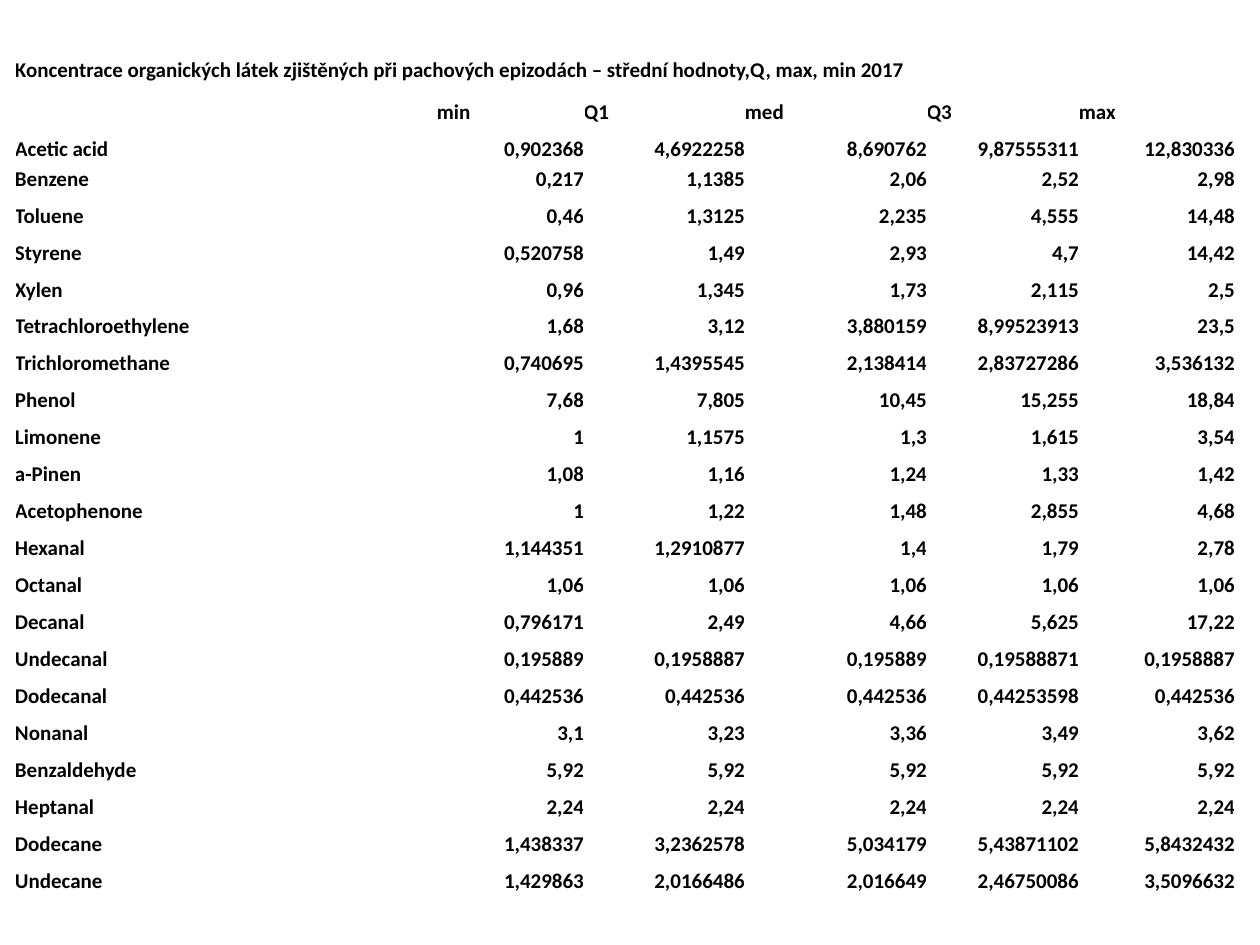
from pptx import Presentation
from pptx.dml.color import RGBColor
from pptx.enum.text import MSO_ANCHOR, PP_ALIGN
from pptx.util import Pt

LEFT, RIGHT = PP_ALIGN.LEFT, PP_ALIGN.RIGHT
BOTTOM = MSO_ANCHOR.BOTTOM
PX = 914400 // 126  # EMU per px
COLORS = {"text": "000000", "label": "FFFFFF"}

TITLE = ("Koncentrace organických látek zjištěných při pachových epizodách"
         " – střední hodnoty,Q, max, min 2017")
HEADERS = ["", "min", "Q1", "med", "Q3", "max"]
SUBSTANCES = [
    ("Acetic acid", "0,902368", "4,6922258", "8,690762", "9,87555311", "12,830336"),
    ("Benzene", "0,217", "1,1385", "2,06", "2,52", "2,98"),
    ("Toluene", "0,46", "1,3125", "2,235", "4,555", "14,48"),
    ("Styrene", "0,520758", "1,49", "2,93", "4,7", "14,42"),
    ("Xylen", "0,96", "1,345", "1,73", "2,115", "2,5"),
    ("Tetrachloroethylene", "1,68", "3,12", "3,880159", "8,99523913", "23,5"),
    ("Trichloromethane", "0,740695", "1,4395545", "2,138414", "2,83727286", "3,536132"),
    ("Phenol", "7,68", "7,805", "10,45", "15,255", "18,84"),
    ("Limonene", "1", "1,1575", "1,3", "1,615", "3,54"),
    ("a-Pinen", "1,08", "1,16", "1,24", "1,33", "1,42"),
    ("Acetophenone", "1", "1,22", "1,48", "2,855", "4,68"),
    ("Hexanal", "1,144351", "1,2910877", "1,4", "1,79", "2,78"),
    ("Octanal", "1,06", "1,06", "1,06", "1,06", "1,06"),
    ("Decanal", "0,796171", "2,49", "4,66", "5,625", "17,22"),
    ("Undecanal", "0,195889", "0,1958887", "0,195889", "0,19588871", "0,1958887"),
    ("Dodecanal", "0,442536", "0,442536", "0,442536", "0,44253598", "0,442536"),
    ("Nonanal", "3,1", "3,23", "3,36", "3,49", "3,62"),
    ("Benzaldehyde", "5,92", "5,92", "5,92", "5,92", "5,92"),
    ("Heptanal", "2,24", "2,24", "2,24", "2,24", "2,24"),
    ("Dodecane", "1,438337", "3,2362578", "5,034179", "5,43871102", "5,8432432"),
    ("Undecane", "1,429863", "2,0166486", "2,016649", "2,46750086", "3,5096632"),
]
ROWS = [[TITLE] + [""] * 5, HEADERS, *SUBSTANCES]
COL_WIDTHS = [422, 147, 161, 182, 152, 156]
ROW_HEIGHTS = [37, 42, 37, 30] + [37] * (len(ROWS) - 4)

prs = Presentation()
prs.slide_width, prs.slide_height = 1260 * PX, 945 * PX
s = prs.slides.add_slide(prs.slide_layouts[6])

# Table grid, without the default banding
table = s.shapes.add_table(
    len(ROWS), len(COL_WIDTHS), 15 * PX, 46 * PX,
    sum(COL_WIDTHS) * PX, sum(ROW_HEIGHTS) * PX).table
table.first_row = table.horz_banding = False
for col, width in zip(table.columns, COL_WIDTHS):
    col.width = width * PX
for row, height in zip(table.rows, ROW_HEIGHTS):
    row.height = height * PX

# Cells: labels and headers to the left, values to the right
for i, texts in enumerate(ROWS):
    for j, text in enumerate(texts):
        cell = table.cell(i, j)
        cell.margin_left = cell.margin_right = 0
        cell.margin_top = cell.margin_bottom = 0
        cell.vertical_anchor = BOTTOM
        if i >= 2 and j == 0:
            cell.fill.solid()
            cell.fill.fore_color.rgb = RGBColor.from_string(COLORS["label"])
        else:
            cell.fill.background()
        p = cell.text_frame.paragraphs[0]
        p.alignment = RIGHT if i >= 2 and j > 0 else LEFT
        p.font.name, p.font.size, p.font.bold = "Calibri", Pt(12), True
        p.font.color.rgb = RGBColor.from_string(COLORS["text"])
        if text:
            p.add_run().text = text

# Title spans the whole width
table.cell(0, 0).merge(table.cell(0, len(COL_WIDTHS) - 1))

prs.save("out.pptx")
